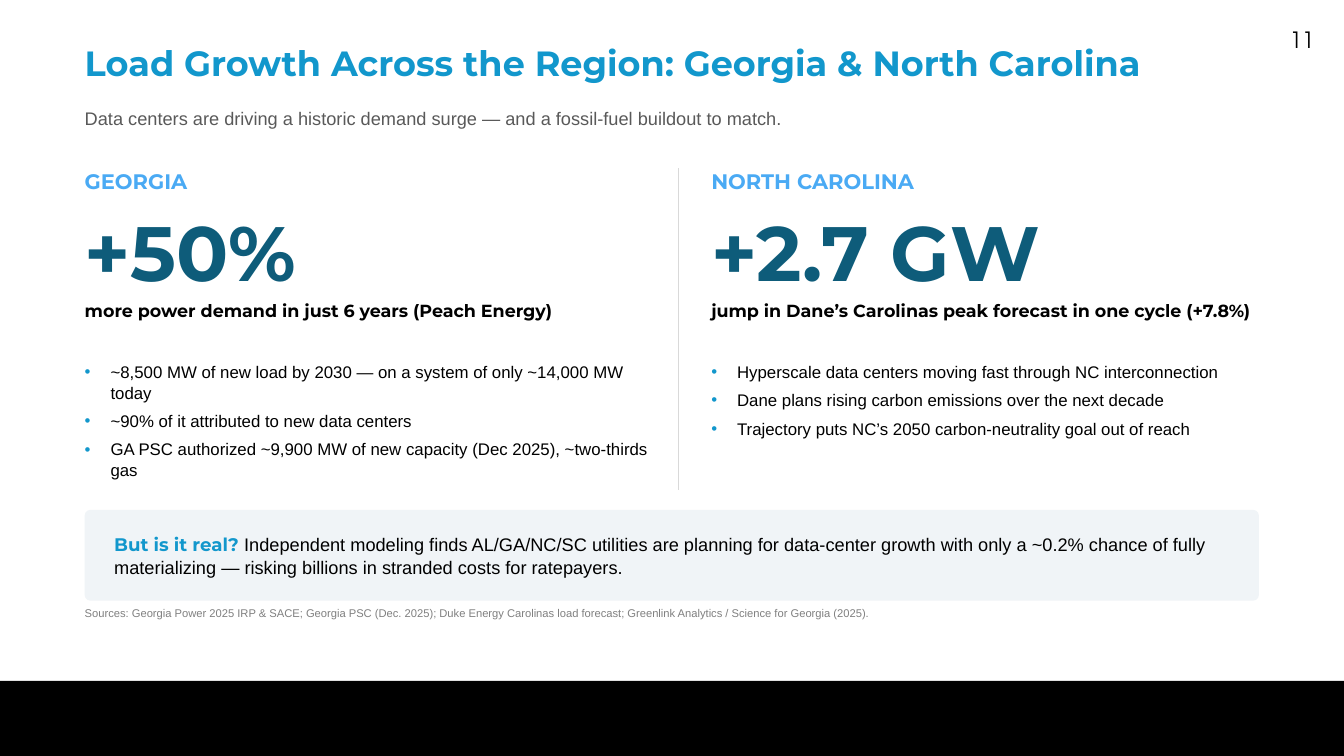
from dataclasses import dataclass

from lxml.etree import SubElement
from pptx import Presentation
from pptx.dml.color import RGBColor
from pptx.enum.shapes import MSO_CONNECTOR as Connector, MSO_SHAPE as Shape
from pptx.enum.text import MSO_ANCHOR as Anchor, PP_ALIGN as Align
from pptx.oxml.ns import qn
from pptx.util import Cm, Pt


@dataclass(frozen=True)
class TextStyle:
    font: str
    size: int
    color: str
    bold: bool = False


@dataclass(frozen=True)
class Theme:
    accent: str = "1297CC"
    divider: str = "D9D9D9"
    panel: str = "F0F4F7"
    footer: str = "000000"
    page_number: TextStyle = TextStyle("TeX Gyre Adventor", 32, "000000")
    title: TextStyle = TextStyle("Montserrat", 50, "1297CC", True)
    subtitle: TextStyle = TextStyle("Arial", 26, "595959")
    state: TextStyle = TextStyle("Montserrat", 30, "4AAAF4", True)
    figure: TextStyle = TextStyle("Montserrat", 110, "0E5C7A", True)
    caption: TextStyle = TextStyle("Montserrat", 25, "000000", True)
    point: TextStyle = TextStyle("Arial", 24, "000000")
    question: TextStyle = TextStyle("Montserrat", 26, "1297CC", True)
    answer: TextStyle = TextStyle("Arial", 26, "000000")
    sources: TextStyle = TextStyle("Arial", 16, "808080")


THEME = Theme()
SLIDE_WIDTH, SLIDE_HEIGHT = 67.72, 38.1
MARGIN, CONTENT_WIDTH = 4.27, 59.16
COLUMN_WIDTH, COLUMN_STEP = 28.88, 31.57
COLUMN_TOP, DIVIDER_X, DIVIDER_BOTTOM = 8.48, 34.16, 24.71
FOOTER_TOP = 34.32

STATES = [
    (
        "GEORGIA",
        "+50%",
        "more power demand in just 6 years (Peach Energy)",
        [
            "~8,500 MW of new load by 2030 — on a system of only ~14,000 MW today",
            "~90% of it attributed to new data centers",
            "GA PSC authorized ~9,900 MW of new capacity (Dec 2025), ~two-thirds gas",
        ],
    ),
    (
        "NORTH CAROLINA",
        "+2.7 GW",
        "jump in Dane’s Carolinas peak forecast in one cycle (+7.8%)",
        [
            "Hyperscale data centers moving fast through NC interconnection",
            "Dane plans rising carbon emissions over the next decade",
            "Trajectory puts NC’s 2050 carbon-neutrality goal out of reach",
        ],
    ),
]


def rgb(color):
    return RGBColor.from_string(color)


def add_run(paragraph, text, style):
    run = paragraph.add_run()
    run.text = text
    run.font.name = style.font
    run.font.size = Pt(style.size)
    run.font.bold = style.bold
    run.font.color.rgb = rgb(style.color)


def set_insets(frame, horizontal=0, vertical=0):
    frame.word_wrap = True
    frame.margin_left = frame.margin_right = Cm(horizontal)
    frame.margin_top = frame.margin_bottom = Cm(vertical)


def add_text_frame(slide, left, top, width, height):
    frame = slide.shapes.add_textbox(Cm(left), Cm(top), Cm(width), Cm(height)).text_frame
    set_insets(frame)
    return frame


def add_label(slide, text, style, left, top, width, height):
    frame = add_text_frame(slide, left, top, width, height)
    add_run(frame.paragraphs[0], text, style)
    return frame


def add_bullet(paragraph):
    properties = paragraph._p.get_or_add_pPr()
    properties.set("marL", str(Cm(1.3)))
    properties.set("indent", str(-Cm(1.3)))
    bullet_color = SubElement(properties, qn("a:buClr"))
    SubElement(bullet_color, qn("a:srgbClr"), val=THEME.accent)
    SubElement(properties, qn("a:buFont"), typeface="Arial")
    SubElement(properties, qn("a:buChar"), char="•")


def add_points(slide, points, left, top, width, height):
    frame = add_text_frame(slide, left, top, width, height)
    for index, point in enumerate(points):
        paragraph = frame.add_paragraph() if index else frame.paragraphs[0]
        add_bullet(paragraph)
        paragraph.line_spacing = 1.03
        paragraph.space_after = Pt(11)
        add_run(paragraph, point, THEME.point)


def add_panel(slide, kind, color, left, top, width, height):
    panel = slide.shapes.add_shape(kind, Cm(left), Cm(top), Cm(width), Cm(height))
    panel.shadow.inherit = False
    panel.fill.solid()
    panel.fill.fore_color.rgb = rgb(color)
    panel.line.fill.background()
    return panel


def add_divider(slide):
    divider = slide.shapes.add_connector(
        Connector.STRAIGHT, Cm(DIVIDER_X), Cm(COLUMN_TOP), Cm(DIVIDER_X), Cm(DIVIDER_BOTTOM)
    )
    divider.line.color.rgb = rgb(THEME.divider)
    divider.line.width = Pt(1)
    SubElement(divider._element.spPr, qn("a:effectLst"))


def add_state(slide, left, name, figure, caption, points):
    add_label(slide, name, THEME.state, left, COLUMN_TOP, COLUMN_WIDTH, 1.96)
    add_label(slide, figure, THEME.figure, left, 10.29, COLUMN_WIDTH, 4.72)
    add_label(slide, caption, THEME.caption, left, 15.14, COLUMN_WIDTH, 2.49)
    add_points(slide, points, left, 18.19, COLUMN_WIDTH, 6.5)


def add_callout(slide, question, answer):
    callout = add_panel(
        slide, Shape.ROUNDED_RECTANGLE, THEME.panel, MARGIN, 25.7, CONTENT_WIDTH, 4.57
    )
    callout.adjustments[0] = 0.06
    frame = callout.text_frame
    set_insets(frame, 1.4, 0.33)
    frame.vertical_anchor = Anchor.MIDDLE
    paragraph = frame.paragraphs[0]
    paragraph.alignment = Align.LEFT
    paragraph.line_spacing = 1.04
    add_run(paragraph, question, THEME.question)
    add_run(paragraph, answer, THEME.answer)


def main():
    deck = Presentation()
    deck.slide_width, deck.slide_height = Cm(SLIDE_WIDTH), Cm(SLIDE_HEIGHT)
    slide = deck.slides.add_slide(deck.slide_layouts[6])

    page_number = add_label(slide, "11", THEME.page_number, 62.36, 1.09, 4.37, 1.88)
    set_insets(page_number, 0.5, 0.25)
    page_number.paragraphs[0].alignment = Align.RIGHT
    add_panel(
        slide, Shape.RECTANGLE, THEME.footer,
        0, FOOTER_TOP, SLIDE_WIDTH, SLIDE_HEIGHT - FOOTER_TOP,
    )

    add_label(
        slide, "Load Growth Across the Region: Georgia & North Carolina",
        THEME.title, MARGIN, 2.11, CONTENT_WIDTH, 3.3,
    )
    add_label(
        slide,
        "Data centers are driving a historic demand surge — and a fossil-fuel buildout to match.",
        THEME.subtitle, MARGIN, 5.41, CONTENT_WIDTH, 1.8,
    )
    add_divider(slide)
    for column, state in enumerate(STATES):
        add_state(slide, MARGIN + column * COLUMN_STEP, *state)
    add_callout(
        slide,
        "But is it real? ",
        "Independent modeling finds AL/GA/NC/SC utilities are planning for data-center growth "
        "with only a ~0.2% chance of fully materializing — risking billions in stranded costs "
        "for ratepayers.",
    )
    add_label(
        slide,
        "Sources: Georgia Power 2025 IRP & SACE; Georgia PSC (Dec. 2025); Duke Energy Carolinas "
        "load forecast; Greenlink Analytics / Science for Georgia (2025).",
        THEME.sources, MARGIN, 30.56, CONTENT_WIDTH, 1.4,
    )
    deck.save("out.pptx")


if __name__ == "__main__":
    main()
